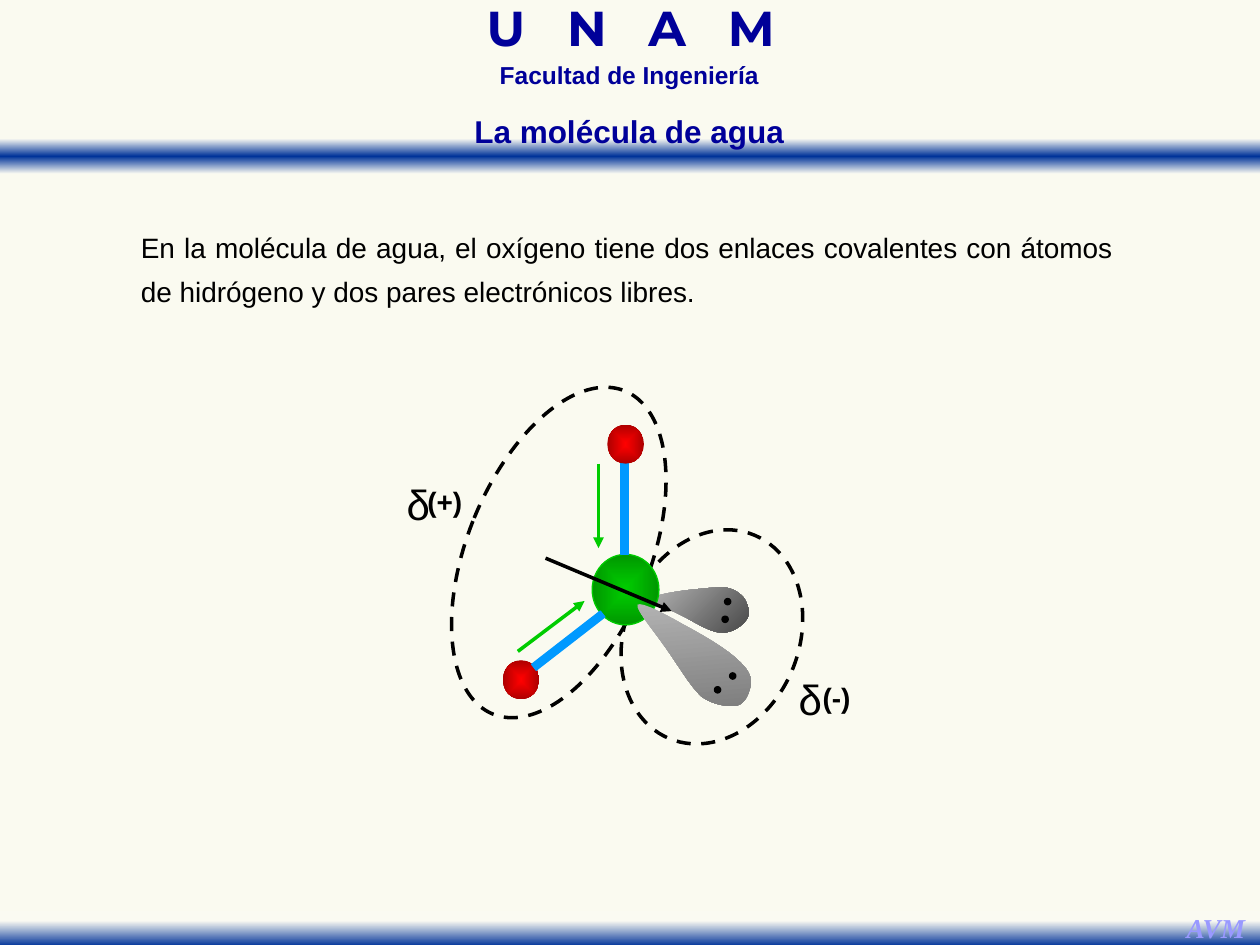
from pptx import Presentation
from pptx.dml.color import RGBColor
from pptx.enum.dml import MSO_LINE
from pptx.enum.shapes import MSO_CONNECTOR, MSO_SHAPE
from pptx.enum.text import PP_ALIGN
from pptx.oxml import parse_xml
from pptx.oxml.ns import nsdecls, qn
from pptx.oxml.xmlchemy import OxmlElement
from pptx.util import Inches, Pt


def paint(shape, fill=None, line=None, width=0.75, stops=None, angle=None):
    shape.shadow.inherit = False
    if stops:
        colours = "".join(
            f'<a:gs pos="{place * 1000}"><a:srgbClr val="{colour}"/></a:gs>' for place, colour in stops)
        if angle is None:
            direction = '<a:path path="shape"><a:fillToRect l="50000" t="50000" r="50000" b="50000"/></a:path>'
        else:
            direction = f'<a:lin ang="{angle * 60000}" scaled="0"/>'
        shape.fill.gradient()
        properties = shape._element.spPr
        properties.replace(properties.find(qn("a:gradFill")), parse_xml(
            f'<a:gradFill {nsdecls("a")} rotWithShape="1"><a:gsLst>{colours}</a:gsLst>{direction}</a:gradFill>'))
    elif fill:
        shape.fill.solid()
        shape.fill.fore_color.rgb = RGBColor.from_string(fill)
    else:
        shape.fill.background()
    if line:
        shape.line.color.rgb = RGBColor.from_string(line)
        shape.line.width = Pt(width)
    else:
        shape.line.fill.background()


def write(box, words, size, colour="000000", font="Arial", bold=False, align=PP_ALIGN.CENTER, spacing=None):
    text_box = slide.shapes.add_textbox(*map(Inches, box))
    text_box.text_frame.word_wrap = True
    paragraph = text_box.text_frame.paragraphs[0]
    paragraph.alignment = align
    paragraph.line_spacing = spacing
    for word in words:
        run = paragraph.add_run()
        run.text = word
        run.font.size = Pt(size)
        run.font.name = font
        run.font.bold = bold
        run.font.color.rgb = RGBColor.from_string(colour)
    return text_box


presentation = Presentation()
presentation.slide_width = Inches(10)
presentation.slide_height = Inches(7.5)
slide = presentation.slides.add_slide(presentation.slide_layouts[6])
slide.background.fill.solid()
slide.background.fill.fore_color.rgb = RGBColor.from_string("FAFAF0")

bands = [
    (1.1, [(0, "FAFAF2"), (50, "003399"), (100, "FAFAF2")]),
    (7.23, [(28, "FAFAF2"), (100, "003399")]),
]
for top, stops in bands:
    band = slide.shapes.add_shape(MSO_SHAPE.RECTANGLE, 0, Inches(top), Inches(10), Inches(0.28))
    paint(band, stops=stops, angle=90)

university = write((3.05, 0.06, 3.91, 0.43), ["U N A ", "M"], 28, "000099", "Montserrat", True, spacing=0.7)
university.text_frame.paragraphs[0].runs[0].font._element.set("spc", "800")
write((3.21, 0.49, 3.57, 0.27), ["Facultad de Ingeniería"], 14, "000099", bold=True, spacing=0.7)
initials = write((9.31, 7.18, 0.68, 0.37), ["AVM"], 15.6, "9999FF", "Times New Roman", True)
initials.text_frame.word_wrap = False
initials.text_frame.paragraphs[0].runs[0].font.italic = True

for left, top, width, height, turn in [(3.71, 3, 1.45, 2.77, 22.2), (4.96, 4.18, 1.38, 1.75, 22.9)]:
    charge_region = slide.shapes.add_shape(
        MSO_SHAPE.OVAL, Inches(left), Inches(top), Inches(width), Inches(height))
    charge_region.rotation = turn
    paint(charge_region, line="000000", width=2)
    charge_region.line.dash_style = MSO_LINE.DASH

explanation = write(
    (0.81, 1.7, 8.12, 0.8),
    ["En la molécula de agua, el oxígeno tiene dos enlaces covalentes con átomos "
     "de hidrógeno y dos pares electrónicos libres."],
    16, align=PP_ALIGN.JUSTIFY, spacing=1.3)
indents = explanation.text_frame.paragraphs[0]._p.get_or_add_pPr()
indents.set("marL", str(Inches(0.21)))
indents.set("indent", "0")

upper_lobe = [
    (5.74, 4.66),
    (5.82, 4.67), (5.86, 4.7), (5.9, 4.74),
    (5.93, 4.78), (5.96, 4.86), (5.93, 4.91),
    (5.9, 4.96), (5.81, 5.03), (5.72, 5.02),
    (5.63, 5.02), (5.47, 4.91), (5.38, 4.87),
    (5.28, 4.82), (5.15, 4.78), (5.17, 4.75),
    (5.19, 4.72), (5.39, 4.69), (5.49, 4.68),
    (5.59, 4.67), (5.69, 4.66), (5.74, 4.66),
]
lower_lobe = [
    (5.88, 5.26),
    (5.96, 5.34), (5.96, 5.38), (5.96, 5.43),
    (5.95, 5.49), (5.92, 5.58), (5.85, 5.6),
    (5.79, 5.61), (5.67, 5.6), (5.57, 5.53),
    (5.48, 5.45), (5.37, 5.26), (5.29, 5.15),
    (5.2, 5.02), (5.04, 4.83), (5.06, 4.8),
    (5.09, 4.77), (5.29, 4.88), (5.43, 4.96),
    (5.56, 5.03), (5.79, 5.16), (5.88, 5.26),
]
bond_parts = [
    (MSO_SHAPE.OVAL, 4.7, 4.4, 0.53, 0.56, 0, "00CC00", "009700"),
    (MSO_SHAPE.RECTANGLE, 4.93, 3.67, 0.06, 0.73, 0, "0099FF", None),
    (MSO_SHAPE.OVAL, 4.82, 3.37, 0.29, 0.31, 0, "FF0000", "AD0000"),
    (MSO_SHAPE.OVAL, 3.99, 5.24, 0.29, 0.31, 0, "FF0000", "AD0000"),
    (MSO_SHAPE.RECTANGLE, 4.48, 4.74, 0.06, 0.69, 52.2, "0099FF", None),
]
lobes = [
    (upper_lobe, "494949", 45, [(5.75, 4.75), (5.73, 4.89)], []),
    (lower_lobe, "7F7F7F", 85, [(5.67, 5.45), (5.79, 5.34)], bond_parts),
]
for curve, dark, angle, electrons, parts_behind in lobes:
    for kind, left, top, width, height, turn, colour, edge in parts_behind:
        part = slide.shapes.add_shape(kind, Inches(left), Inches(top), Inches(width), Inches(height))
        part.rotation = turn
        outline = None if colour == "FF0000" else colour
        paint(part, colour, outline, stops=[(0, colour), (100, edge)] if edge else None)
    points = []
    for first in range(0, len(curve) - 1, 3):
        for step in range(1, 9):
            t = step / 8
            weights = ((1 - t) ** 3, 3 * t * (1 - t) ** 2, 3 * t ** 2 * (1 - t), t ** 3)
            points.append(tuple(
                Inches(sum(weight * point[axis] for weight, point in zip(weights, curve[first:first + 4])))
                for axis in (0, 1)))
    builder = slide.shapes.build_freeform(*map(Inches, curve[0]))
    builder.add_line_segments(points, close=True)
    paint(builder.convert_to_shape(), stops=[(0, "B2B2B2"), (100, dark)], angle=angle)
    for left, top in electrons:
        electron = slide.shapes.add_shape(
            MSO_SHAPE.OVAL, Inches(left), Inches(top), Inches(0.05), Inches(0.05))
        paint(electron, "000000", "000000")

dipoles = [
    (4.75, 3.68, 4.75, 4.35, "00CC00"),
    (4.11, 5.17, 4.64, 4.77, "00CC00"),
    (4.33, 4.43, 5.33, 4.85, "000000"),
]
for *ends, colour in dipoles:
    dipole = slide.shapes.add_connector(MSO_CONNECTOR.STRAIGHT, *map(Inches, ends))
    dipole.line.color.rgb = RGBColor.from_string(colour)
    dipole.line.width = Pt(2)
    arrowhead = OxmlElement("a:tailEnd")
    arrowhead.set("type", "triangle")
    dipole.line._get_or_add_ln().append(arrowhead)
    dipole._element.spPr.append(OxmlElement("a:effectLst"))

for left, top, sign in [(6.22, 5.3, "(-)"), (3.11, 3.75, "(+)")]:
    write((left, top, 0.42, 0.5), ["δ"], 24)
    write((left + 0.17, top + 0.05, 0.5, 0.37), [sign], 16, bold=True)

write((2.83, 0.84, 4.33, 0.4), ["La molécula de agua"], 18, "000099", bold=True)

presentation.save("out.pptx")
